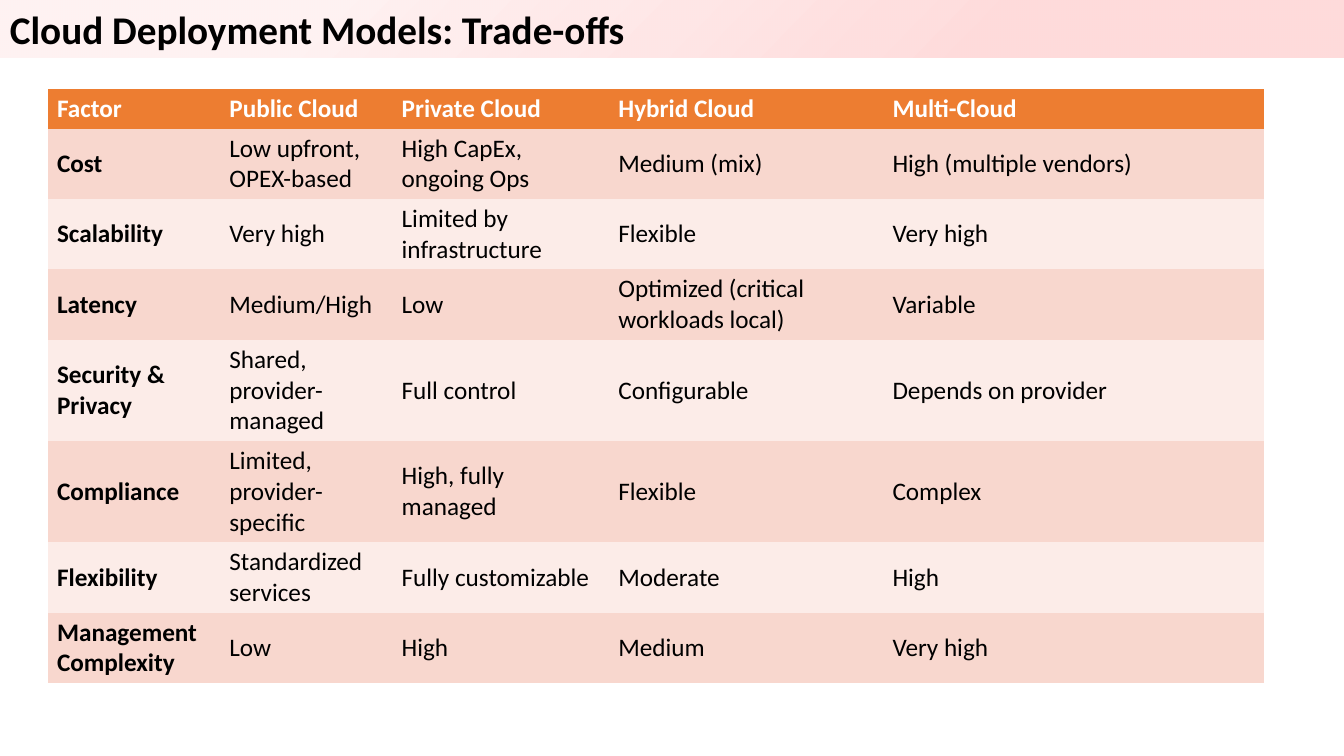
from pptx import Presentation
from pptx.dml.color import RGBColor
from pptx.enum.shapes import MSO_SHAPE as Preset
from pptx.enum.text import MSO_ANCHOR as Anchor, PP_ALIGN as Align
from pptx.oxml import parse_xml
from pptx.oxml.ns import nsdecls, qn
from pptx.util import Pt

BLACK, WHITE, ORANGE, RED = "000000", "FFFFFF", "ED7D31", "FF0000"
BANDS = ["F8D7CE", "FCECE8"]
NO_GRID_STYLE = "{2D5ABB26-0587-4C30-8999-92F81FD0307C}"

COLUMN_WIDTHS = [123.1, 123.1, 154.8, 195.8, 271.4]
ROW_HEIGHT = 21.6  # rows grow to fit their text
FACTORS = [
    ["Factor", "Public Cloud", "Private Cloud", "Hybrid Cloud", "Multi-Cloud"],
    ["Cost", "Low upfront, OPEX-based", "High CapEx, ongoing Ops",
     "Medium (mix)", "High (multiple vendors)"],
    ["Scalability", "Very high", "Limited by infrastructure", "Flexible", "Very high"],
    ["Latency", "Medium/High", "Low", "Optimized (critical workloads local)", "Variable"],
    ["Security & Privacy", "Shared, provider-managed", "Full control",
     "Configurable", "Depends on provider"],
    ["Compliance", "Limited, provider-specific", "High, fully managed",
     "Flexible", "Complex"],
    ["Flexibility", "Standardized services", "Fully customizable", "Moderate", "High"],
    ["Management Complexity", "Low", "High", "Medium", "Very high"],
]


def rgb(value):
    return RGBColor.from_string(value)


class SlideBuilder:
    font_name = "Calibri"

    def __init__(self, slide):
        self.slide = slide

    def set_text(self, paragraph, text, size, color, bold):
        paragraph.text = text
        paragraph.alignment = Align.LEFT
        font = paragraph.font
        font.name, font.size, font.bold = self.font_name, Pt(size), bold
        font.color.rgb = rgb(color)

    def radial_fill(self, shape, color, stops):
        """Fill from the bottom right corner; stops are (position, opacity) in percent."""
        stop_xml = "".join(
            f'<a:gs pos="{position * 1000}"><a:srgbClr val="{color}">'
            f'<a:alpha val="{opacity * 1000}"/></a:srgbClr></a:gs>'
            for position, opacity in stops)
        gradient = parse_xml(
            f'<a:gradFill {nsdecls("a")} rotWithShape="1"><a:gsLst>{stop_xml}</a:gsLst>'
            '<a:path path="circle"><a:fillToRect l="100000" t="100000"/></a:path>'
            '</a:gradFill>')
        shape.fill.background()
        properties = shape.element.spPr
        properties.replace(properties.find(qn("a:noFill")), gradient)

    def title_bar(self, text, width, height):
        bar = self.slide.shapes.add_shape(Preset.RECTANGLE, 0, 0, Pt(width), Pt(height))
        bar.shadow.inherit = False
        self.radial_fill(bar, RED, [(26, 14), (76, 5)])
        bar.line.fill.background()
        bar.text_frame.word_wrap = True
        bar.text_frame.vertical_anchor = Anchor.MIDDLE
        self.set_text(bar.text_frame.paragraphs[0], text, 28, BLACK, True)

    def table(self, rows, left, top, widths, row_height):
        frame = self.slide.shapes.add_table(
            len(rows), len(widths), Pt(left), Pt(top),
            Pt(sum(widths)), Pt(row_height * len(rows)))
        # The default table style draws white rules between cells
        for style_id in frame.element.iter(qn("a:tableStyleId")):
            style_id.text = NO_GRID_STYLE
        table = frame.table
        for column, width in zip(table.columns, widths):
            column.width = Pt(width)
        for r, row in enumerate(rows):
            header = r == 0
            background = ORANGE if header else BANDS[(r - 1) % 2]
            for c, text in enumerate(row):
                cell = table.cell(r, c)
                cell.fill.solid()
                cell.fill.fore_color.rgb = rgb(background)
                cell.vertical_anchor = Anchor.MIDDLE
                cell.margin_left = cell.margin_right = Pt(6.35)
                cell.margin_top = cell.margin_bottom = Pt(3.18)
                self.set_text(cell.text_frame.paragraphs[0], text, 18,
                              WHITE if header else BLACK, header or c == 0)


def main():
    presentation = Presentation()
    presentation.slide_width, presentation.slide_height = Pt(960), Pt(540)
    builder = SlideBuilder(presentation.slides.add_slide(presentation.slide_layouts[6]))

    # Title across the top
    builder.title_bar("Cloud Deployment Models: Trade-offs", 960, 41.2)

    # Comparison of the deployment models
    builder.table(FACTORS, 34.4, 63.5, COLUMN_WIDTHS, ROW_HEIGHT)

    presentation.save("out.pptx")


if __name__ == "__main__":
    main()
